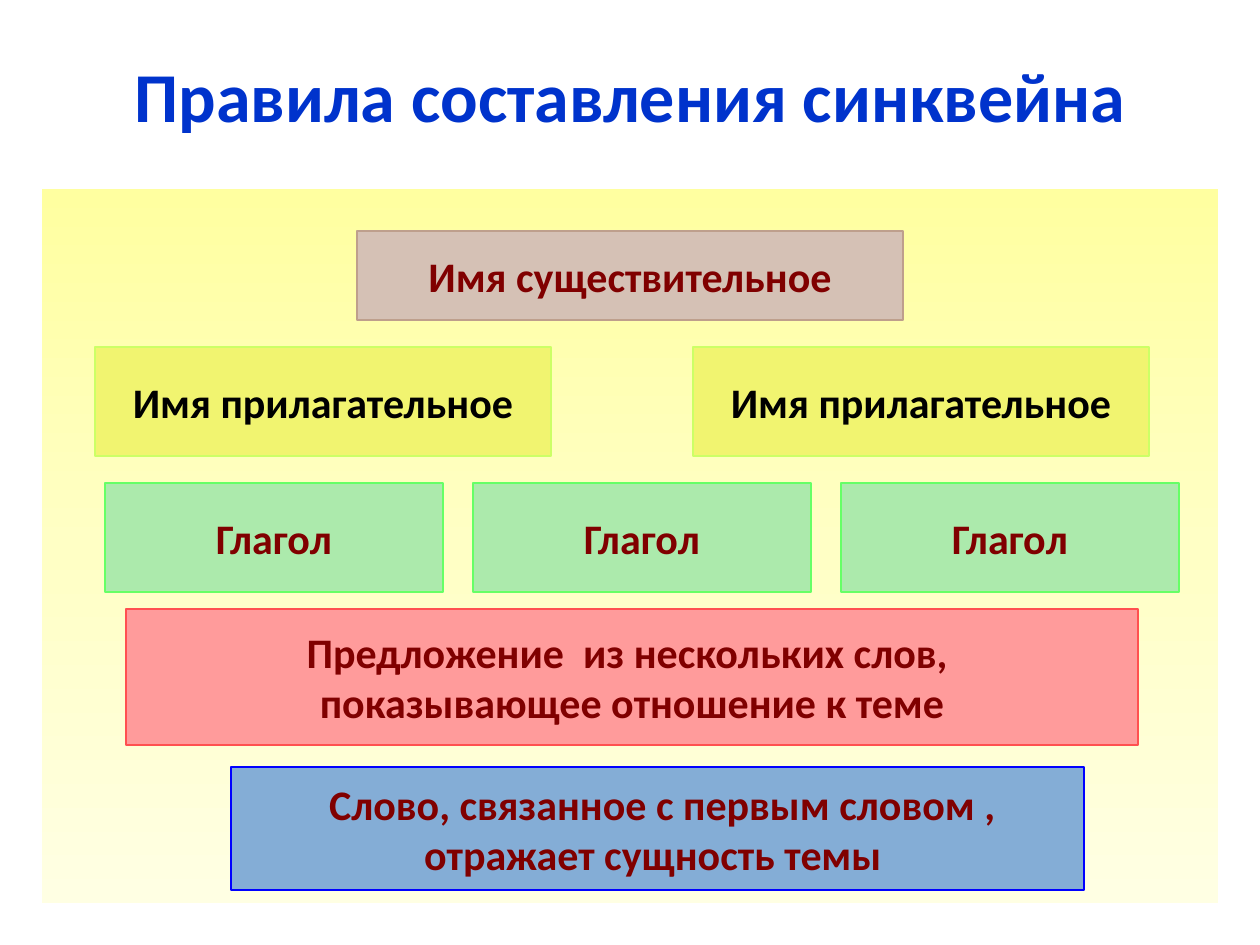
import copy
import pptx
import pptx.dml.color
import pptx.enum.shapes
import pptx.enum.text
import pptx.util

PX = 914400 / 126


def rgb(value):
    return pptx.dml.color.RGBColor.from_string(value)


def add_box(s, box, fill=None, line=None, text="", color="800000", size=24):
    sp = s.shapes.add_shape(pptx.enum.shapes.MSO_SHAPE.RECTANGLE,
                            *[round(v * PX) for v in box])
    sp.shadow.inherit = False
    if fill:
        sp.fill.solid()
        sp.fill.fore_color.rgb = rgb(fill)
    if line:
        sp.line.color.rgb = rgb(line)
        sp.line.width = pptx.util.Pt(0.75)
    else:
        sp.line.fill.background()
    tf = sp.text_frame
    tf.word_wrap = False
    tf.vertical_anchor = pptx.enum.text.MSO_ANCHOR.MIDDLE
    tf.text = text
    for p in tf.paragraphs:
        p.alignment = pptx.enum.text.PP_ALIGN.CENTER
        for r in p.runs:
            r.font.name = "Calibri"
            r.font.size = pptx.util.Pt(size)
            r.font.bold = True
            r.font.color.rgb = rgb(color)
    return sp


prs = pptx.Presentation()
prs.slide_width = pptx.util.Inches(10)
prs.slide_height = pptx.util.Inches(7.5)
s = prs.slides.add_slide(prs.slide_layouts[6])

panel = add_box(s, (42, 189, 1176, 714))
panel.fill.gradient()
panel.fill.gradient_angle = 270
stops = panel._element.spPr.find(".//" + pptx.oxml.ns.qn("a:gsLst"))
stops.insert(1, copy.deepcopy(stops[0]))
for stop, position, color in zip(panel.fill.gradient_stops, (0, 0.5, 1),
                                 ("FFFFA0", "FFFFC5", "FFFFE3")):
    stop.position = position
    stop.color.rgb = rgb(color)

add_box(s, (42, 32, 1176, 126), "FFFFFF", None,
        "Правила составления синквейна", "0033CC", 40)
add_box(s, (357, 231, 546, 89), "D5C1B5", "BE9F8C", "Имя существительное")
for i in range(2):
    add_box(s, (95 + 598 * i, 347, 456, 109), "F1F470", "CCFF66",
            "Имя прилагательное", "000000")
for i in range(3):
    add_box(s, (105 + 368 * i, 483, 338, 109), "ACEAAC", "66FF66", "Глагол")
add_box(s, (126, 609, 1012, 136), "FF9B9B", "FF5050",
        "Предложение  из нескольких слов, \nпоказывающее отношение к теме")
add_box(s, (231, 767, 853, 123), "84ADD6", "0000FF",
        "  Слово, связанное с первым словом , \nотражает сущность темы ")

prs.save("out.pptx")
